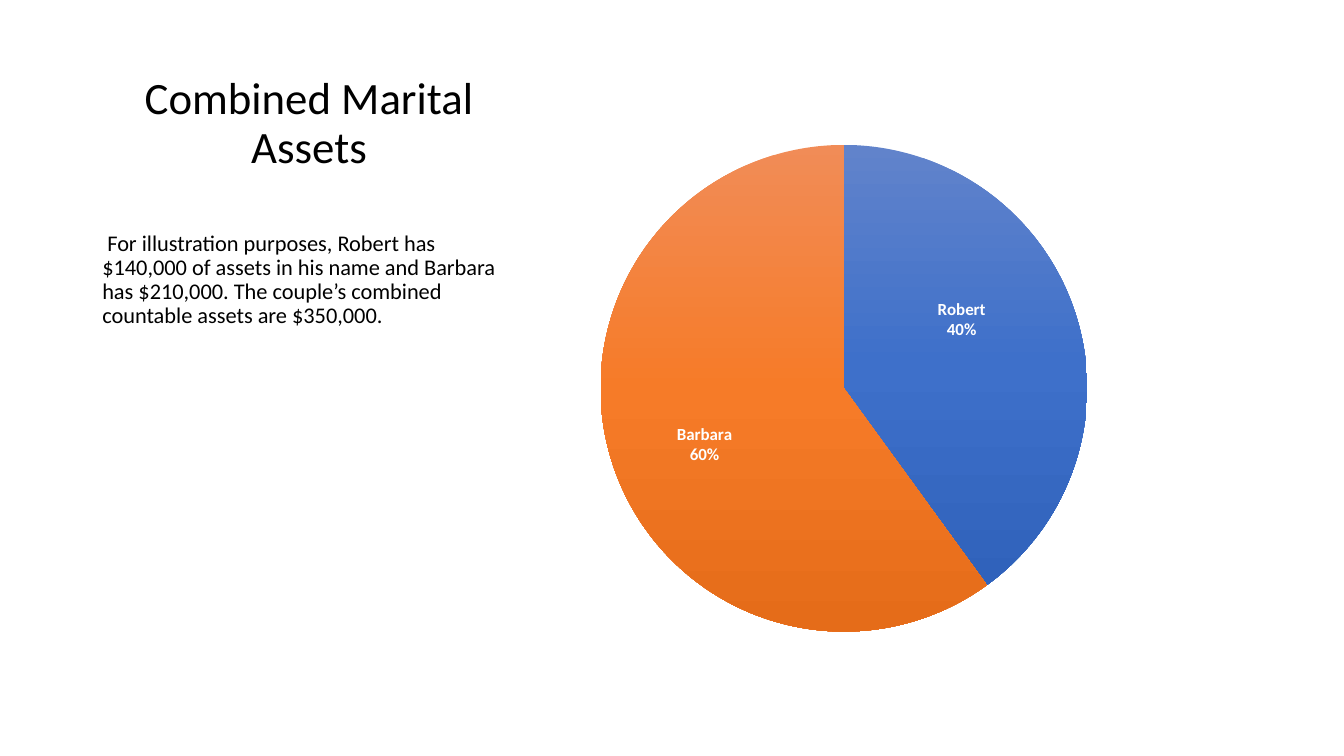
"""Build the slide on combined marital assets."""
import copy

import pptx
import pptx.chart.data
import pptx.dml.color
import pptx.enum.chart
import pptx.enum.text
import pptx.oxml
import pptx.oxml.ns
import pptx.util

Pt = pptx.util.Pt
qn = pptx.oxml.ns.qn
ALIGN = pptx.enum.text.PP_ALIGN
ANCHOR = pptx.enum.text.MSO_ANCHOR

SLICES = [
    ("Robert", 40, ("6183CB", "3E70CA", "3062BB"), (0.003, -0.06)),
    ("Barbara", 60, ("F18C57", "F67B28", "E56C19"), (-0.034, 0.037)),
]
PLOT = {"x": 0.157, "y": 0.027, "w": 0.7, "h": 0.945}


def color(code):
    """Return the colour for a hex string."""
    return pptx.dml.color.RGBColor.from_string(code)


def apply(item, form):
    """Set each attribute named in a dict of format values."""
    for name, value in form.items():
        setattr(item, name, value)


def style(font, size, code, bold=False):
    """Give a font its face, size, weight and colour."""
    apply(font, {"name": "Calibri", "size": Pt(size), "bold": bold})
    font.color.rgb = color(code)


def add_text(slide, box, words, size, frame, para):
    """Add a text box with one paragraph."""
    text = slide.shapes.add_textbox(*map(Pt, box)).text_frame
    apply(text, {"word_wrap": True, **frame})
    line = text.paragraphs[0]
    apply(line, {"line_spacing": 0.9, **para})
    run = line.add_run()
    run.text = words
    style(run.font, size, "000000")
    return line


def layout(**places):
    """Return a manual chart layout."""
    node = pptx.oxml.parse_xml(
        '<c:layout xmlns:c="http://schemas.openxmlformats.org/drawingml/2006/chart">'
        "<c:manualLayout/></c:layout>")
    for name, value in places.items():
        node[0].append(node.makeelement(qn("c:" + name), {"val": str(value)}))
    return node


def shade(fill, codes):
    """Fill with evenly spaced colours from top to bottom."""
    fill.gradient()
    fill.gradient_angle = 270
    first = fill.gradient_stops[0]._gs
    for _ in codes[2:]:
        first.addnext(copy.deepcopy(first))
    for i, (stop, code) in enumerate(zip(fill.gradient_stops, codes)):
        stop.position = i / (len(codes) - 1)
        stop.color.rgb = color(code)


def add_label(point, shift):
    """Show name and share on a slice, moved from its centre."""
    label = point.data_label
    style(label.font, 12.1, "FFFFFF", True)
    label.position = pptx.enum.chart.XL_LABEL_POSITION.CENTER
    node = label._get_or_add_dLbl()
    for name, value in {"showVal": "0", "showCatName": "1", "showPercent": "1"}.items():
        node.find(qn("c:" + name)).set("val", value)
    mark = node.makeelement(qn("c:separator"), {})
    mark.text = "\n"
    node.append(mark)
    node.find(qn("c:idx")).addnext(layout(x=shift[0], y=shift[1]))


def add_pie(slide, box, slices):
    """Add the pie chart with shaded slices."""
    data = pptx.chart.data.CategoryChartData()
    data.categories = [part[0] for part in slices]
    data.add_series("Series 1", [part[1] for part in slices])
    kind = pptx.enum.chart.XL_CHART_TYPE.PIE
    chart = slide.shapes.add_chart(kind, *map(Pt, box), data).chart
    apply(chart, {"has_legend": False, "has_title": False})
    style(chart.font, 10, "000000")
    area = chart._chartSpace.chart.plotArea
    for old in area.findall(qn("c:layout")):
        area.remove(old)
    area.insert(0, layout(layoutTarget="inner", xMode="edge", yMode="edge", **PLOT))
    series = chart.plots[0].series[0]
    for i, (_, _, codes, shift) in enumerate(slices):
        point = series.points[i]
        shade(point.format.fill, codes)
        point.format.line.fill.background()
        add_label(point, shift)


def main():
    """Build and save the slide."""
    deck = pptx.Presentation()
    apply(deck, {"slide_width": Pt(960), "slide_height": Pt(540)})
    slide = deck.slides.add_slide(deck.slide_layouts[6])
    add_text(slide, (66, 36, 309.6, 126), "Combined Marital Assets", 32,
             {"vertical_anchor": ANCHOR.BOTTOM, "margin_bottom": Pt(38.6)},
             {"alignment": ALIGN.CENTER})
    body = add_text(slide, (66, 162, 309.6, 300),
                    "For illustration purposes, Robert has $140,000 of assets in his name "
                    "and Barbara has $210,000. The couple’s combined countable assets "
                    "are $350,000.", 16,
                    {"vertical_anchor": ANCHOR.TOP},
                    {"alignment": ALIGN.LEFT, "space_before": Pt(10)})
    body._p.get_or_add_pPr().set("indent", str(Pt(3.6)))
    add_pie(slide, (350.6, 93.6, 497.5, 367.9), SLICES)
    deck.save("out.pptx")


if __name__ == "__main__":
    main()
